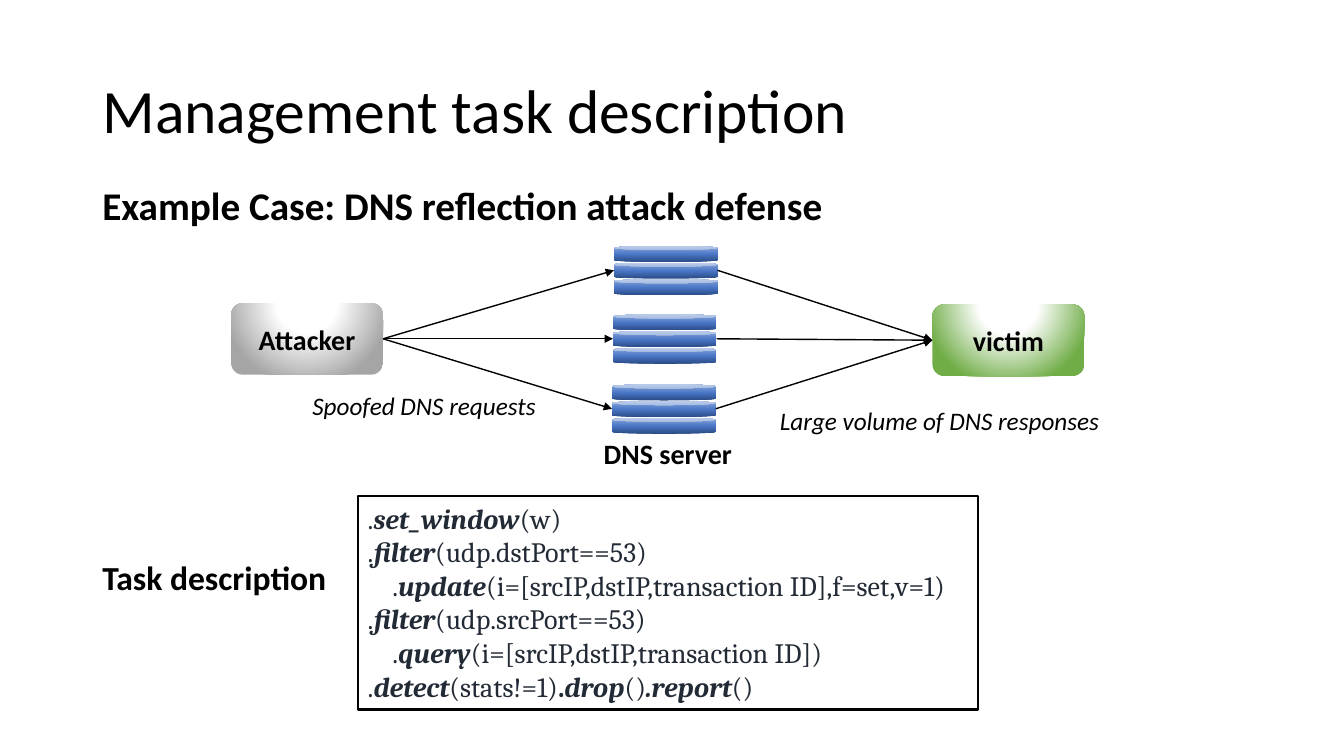
import pptx
import pptx.util
import pptx.dml.color
import pptx.enum.shapes
import pptx.enum.text
import pptx.oxml
import pptx.oxml.ns

Pt = pptx.util.Pt
rgb = pptx.dml.color.RGBColor.from_string
MSO_SHAPE = pptx.enum.shapes.MSO_SHAPE
PP_ALIGN = pptx.enum.text.PP_ALIGN
ANCHOR = pptx.enum.text.MSO_ANCHOR
NS = pptx.oxml.ns.nsdecls("a")


def add_run(p, text, size, bold=False, italic=False, font="Calibri", color="000000"):
    r = p.add_run()
    r.text = text
    r.font.name, r.font.size = font, Pt(size)
    r.font.bold, r.font.italic = bold, italic
    r.font.color.rgb = rgb(color)


def add_gradient_shape(kind, box, stops, direction):
    """Add a borderless shape; direction is the a:lin or a:path element as XML."""
    sp = s.shapes.add_shape(kind, *map(Pt, box))
    sp.shadow.inherit = False
    sp.line.fill.background()
    gs = "".join(f'<a:gs pos="{pos * 1000}"><a:srgbClr val="{color}"/></a:gs>'
                 for pos, color in stops)
    grad = pptx.oxml.parse_xml(
        f'<a:gradFill {NS} rotWithShape="1"><a:gsLst>{gs}</a:gsLst>{direction}</a:gradFill>')
    sp._element.spPr.find(pptx.oxml.ns.qn("a:prstGeom")).addnext(grad)
    return sp


prs = pptx.Presentation()
prs.slide_width, prs.slide_height = Pt(960), Pt(540)
s = prs.slides.add_slide(prs.slide_layouts[5])

# Title
title = s.shapes.title
title.left, title.top, title.width, title.height = Pt(66), Pt(28.8), Pt(828), Pt(104.4)
tf = title.text_frame
tf.vertical_anchor = ANCHOR.MIDDLE
p = tf.paragraphs[0]
p.alignment = PP_ALIGN.LEFT
p.line_spacing = 0.9
add_run(p, "Management task description", 44)

# Attacker and victim
glow = '<a:path path="circle"><a:fillToRect l="50000" t="-80000" r="50000" b="180000"/></a:path>'
for name, x, y, color in [("Attacker", 165, 216.5, "A5A5A5"), ("victim", 666, 217.5, "70AD47")]:
    sp = add_gradient_shape(MSO_SHAPE.ROUNDED_RECTANGLE, (x, y, 108.6, 51.2),
                            [(0, "FFFFFF"), (35, "FFFFFF"), (100, color)], glow)
    sp.text_frame.vertical_anchor = ANCHOR.MIDDLE
    p = sp.text_frame.paragraphs[0]
    p.alignment = PP_ALIGN.CENTER
    add_run(p, name, 20, bold=True)

# DNS servers: three stacked disks each, with an arrow in and an arrow out
attacker_out, victim_in = (273.6, 242), (666, 243)
disk_w, disk_h, disk_step = 74, 11.6, 11.9
for x, y in [(438.6, 175.6), (437.8, 224.5), (437.2, 274.5)]:
    for level in (2, 1, 0):
        add_gradient_shape(MSO_SHAPE.CAN, (x, y + level * disk_step, disk_w, disk_h),
                           [(0, "2A4B86"), (48, "4A76C6"), (100, "8FAADC")],
                           '<a:lin ang="16200000" scaled="1"/>')
    mid = y + 17.5
    for start, end in [(attacker_out, (x, mid)), ((x + disk_w, mid), victim_in)]:
        arrow = s.shapes.add_connector(pptx.enum.shapes.MSO_CONNECTOR.STRAIGHT,
                                       *map(Pt, start + end))
        arrow.line.color.rgb = rgb("000000")
        arrow.line.width = Pt(1)
        arrow.line._get_or_add_ln().append(
            pptx.oxml.parse_xml(f'<a:tailEnd {NS} type="triangle"/>'))
        arrow._element.spPr.append(pptx.oxml.parse_xml(f"<a:effectLst {NS}/>"))

# Labels
for text, box, size, bold, align in [
    ("Spoofed DNS requests", (216, 275, 178.6, 29), 18, False, PP_ALIGN.LEFT),
    ("Large volume of DNS responses", (550, 286, 247, 29), 18, False, PP_ALIGN.LEFT),
    ("Example Case: DNS reflection attack defense", (66, 126, 536.4, 41), 28, True, PP_ALIGN.LEFT),
    ("Task description", (66, 394, 176.4, 36), 24, True, PP_ALIGN.LEFT),
    ("DNS server", (423.4, 308.2, 107.3, 31.5), 20, True, PP_ALIGN.CENTER),
]:
    tf = s.shapes.add_textbox(*map(Pt, box)).text_frame
    tf.word_wrap = False
    p = tf.paragraphs[0]
    p.alignment = align
    add_run(p, text, size, bold=bold, italic=not bold)

# Task code: indent, then (text, bold, italic) runs
code = [
    (0, [(".", 0, 0), ("set_window", 1, 1), ("(w)", 0, 0)]),
    (0, [(".", 0, 0), ("filter", 1, 1), ("(udp.dstPort==53)", 0, 0)]),
    (17.6, [(".", 0, 0), ("update", 1, 1),
            ("(i=[srcIP,dstIP,transaction ID],f=set,v=1)", 0, 0)]),
    (0, [(".", 0, 0), ("filter", 1, 1), ("(udp.srcPort==53)", 0, 0)]),
    (17.6, [(".", 0, 0), ("query", 1, 1), ("(i=[srcIP,dstIP,transaction ID])", 0, 0)]),
    (0, [(".", 0, 0), ("detect", 1, 1), ("(stats!=1)", 0, 0), (".", 1, 0), ("drop", 1, 1),
         ("()", 0, 0), (".report", 1, 1), ("()", 0, 0)]),
]
sp = s.shapes.add_shape(MSO_SHAPE.RECTANGLE, Pt(255.6), Pt(354.4), Pt(443), Pt(152.6))
sp.shadow.inherit = False
sp.fill.background()
sp.line.color.rgb = rgb("000000")
sp.line.width = Pt(1.75)
tf = sp.text_frame
tf.word_wrap = True
tf.vertical_anchor = ANCHOR.TOP
for i, (indent, runs) in enumerate(code):
    p = tf.add_paragraph() if i else tf.paragraphs[0]
    p.alignment = PP_ALIGN.LEFT
    p._p.get_or_add_pPr().set("marL", str(Pt(indent)))
    for text, bold, italic in runs:
        add_run(p, text, 20, bool(bold), bool(italic), "Cambria", "222A35")

prs.save("out.pptx")
